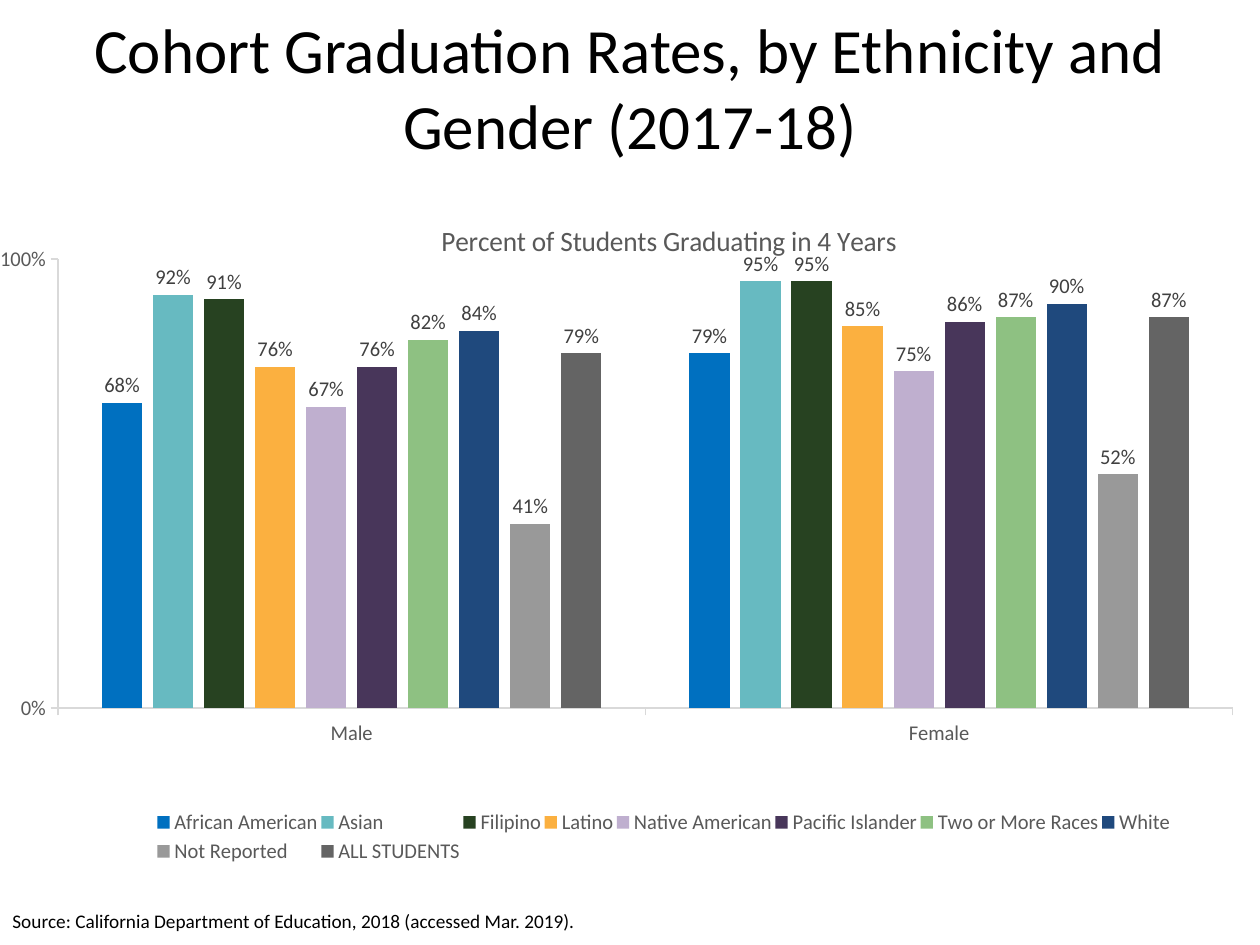
from dataclasses import dataclass

from lxml import etree
from pptx import Presentation
from pptx.chart.data import CategoryChartData
from pptx.dml.color import RGBColor
from pptx.enum.chart import (XL_CHART_TYPE, XL_LABEL_POSITION,
                             XL_LEGEND_POSITION, XL_TICK_MARK)
from pptx.enum.text import MSO_ANCHOR, PP_ALIGN
from pptx.oxml.ns import qn
from pptx.util import Pt

COLUMN = XL_CHART_TYPE.COLUMN_CLUSTERED
OUT_END = XL_LABEL_POSITION.OUTSIDE_END
BOTTOM = XL_LEGEND_POSITION.BOTTOM
OUTSIDE, NO_TICK = XL_TICK_MARK.OUTSIDE, XL_TICK_MARK.NONE
TOP, MIDDLE = MSO_ANCHOR.TOP, MSO_ANCHOR.MIDDLE
LEFT, CENTER = PP_ALIGN.LEFT, PP_ALIGN.CENTER

SCALE = 9144  # EMU per px, 100 px to the inch


@dataclass(frozen=True)
class Theme:
    font: str = "Calibri"
    ink: str = "000000"
    grey: str = "595959"
    label: str = "404040"
    rule: str = "D9D9D9"
    head: int = 36
    title: int = 16
    small: int = 12
    note: int = 11


@dataclass(frozen=True)
class Group:
    name: str
    male: float
    female: float
    color: str


THEME = Theme()
GROUPS = [
    Group("African American", 0.68, 0.79, "0070C0"),
    Group("Asian", 0.92, 0.95, "67BAC1"),
    Group("Filipino", 0.91, 0.95, "274221"),
    Group("Latino", 0.76, 0.85, "FBB040"),
    Group("Native American", 0.67, 0.75, "BFAFCF"),
    Group("Pacific Islander", 0.76, 0.86, "48365A"),
    Group("Two or More Races", 0.82, 0.87, "8EC182"),
    Group("White", 0.84, 0.90, "1F497D"),
    Group("Not Reported", 0.41, 0.52, "999999"),
    Group("ALL STUDENTS", 0.79, 0.87, "646464"),
]


def px(*vals: int) -> list[int]:
    return [val * SCALE for val in vals]


def style(font, size: int, color: str) -> None:
    font.name, font.size, font.bold = THEME.font, Pt(size), False
    font.color.rgb = RGBColor.from_string(color)


def add_text(slide, text: str, box: tuple, *, size: int,
             color: str = THEME.ink, align=LEFT, anchor=TOP) -> None:
    frame = slide.shapes.add_textbox(*px(*box)).text_frame
    frame.word_wrap = True
    frame.vertical_anchor = anchor
    para = frame.paragraphs[0]
    para.alignment = align
    run = para.add_run()
    run.text = text
    style(run.font, size, color)


def place(part, **sizes: float) -> None:
    """Give a chart part a fixed layout, in fractions of the chart."""
    for old in part.findall(qn("c:layout")):
        part.remove(old)
    layout = etree.Element(qn("c:layout"))
    manual = etree.SubElement(layout, qn("c:manualLayout"))
    if part.tag == qn("c:plotArea"):
        etree.SubElement(manual, qn("c:layoutTarget")).set("val", "inner")
    for key in ("x", "y"):
        etree.SubElement(manual, qn(f"c:{key}Mode")).set("val", "edge")
    for key, val in sizes.items():
        etree.SubElement(manual, qn(f"c:{key}")).set("val", str(val))
    before = part.findall(qn("c:tx")) + part.findall(qn("c:legendPos"))
    part.insert(part.index(before[-1]) + 1 if before else 0, layout)


def style_axis(axis) -> None:
    axis.has_major_gridlines = False
    axis.major_tick_mark, axis.minor_tick_mark = OUTSIDE, NO_TICK
    style(axis.tick_labels.font, THEME.small, THEME.grey)
    line = axis.format.line
    line.width = Pt(0.75)
    line.color.rgb = RGBColor.from_string(THEME.rule)


def add_bars(slide, groups: list[Group], box: tuple) -> None:
    data = CategoryChartData(number_format="0%")
    data.categories = ["Male", "Female"]
    for group in groups:
        data.add_series(group.name, (group.male, group.female))
    chart = slide.shapes.add_chart(COLUMN, *px(*box), data).chart
    style(chart.font, 10, THEME.ink)

    # Title and legend
    chart.has_title = True
    para = chart.chart_title.text_frame.paragraphs[0]
    run = para.add_run()
    run.text = "Percent of Students Graduating in 4 Years"
    style(run.font, THEME.title, THEME.grey)
    chart.has_legend = True
    legend = chart.legend
    legend.position, legend.include_in_layout = BOTTOM, False
    style(legend.font, THEME.small, THEME.grey)

    # Axes
    for axis in (chart.category_axis, chart.value_axis):
        style_axis(axis)
    rate = chart.value_axis
    rate.minimum_scale, rate.maximum_scale, rate.major_unit = 0, 1, 1
    rate.tick_labels.number_format = "0%"
    rate.tick_labels.number_format_is_linked = False

    # Bars and their labels
    plot = chart.plots[0]
    plot.gap_width, plot.overlap = 219, -27
    plot.vary_by_categories = False
    for group, bar in zip(groups, plot.series):
        bar.format.fill.solid()
        bar.format.fill.fore_color.rgb = RGBColor.from_string(group.color)
        labels = bar.data_labels
        labels.show_value, labels.position = True, OUT_END
        labels.number_format = "0%"
        labels.number_format_is_linked = False
        style(labels.font, THEME.small, THEME.label)

    # Layout
    root = chart.element.find(qn("c:chart"))
    place(root.find(qn("c:title")), x=0.33, y=0.04)
    place(root.find(qn("c:plotArea")), x=0.022, y=0.101, w=0.956, h=0.648)
    place(root.find(qn("c:legend")), x=0.1, y=0.89, w=0.83, h=0.09)


def main() -> None:
    deck = Presentation()
    deck.slide_width, deck.slide_height = px(1000, 750)
    slide = deck.slides.add_slide(deck.slide_layouts[6])
    add_text(slide, "Cohort Graduation Rates, by Ethnicity and Gender (2017-18)",
             (0, 10, 1000, 117), size=THEME.head, align=CENTER, anchor=MIDDLE)
    add_bars(slide, GROUPS, (0, 150, 1000, 550))
    add_text(slide, "Source: California Department of Education, 2018 "
             "(accessed Mar. 2019).", (0, 717, 542, 25), size=THEME.note)
    deck.save("out.pptx")


if __name__ == "__main__":
    main()
